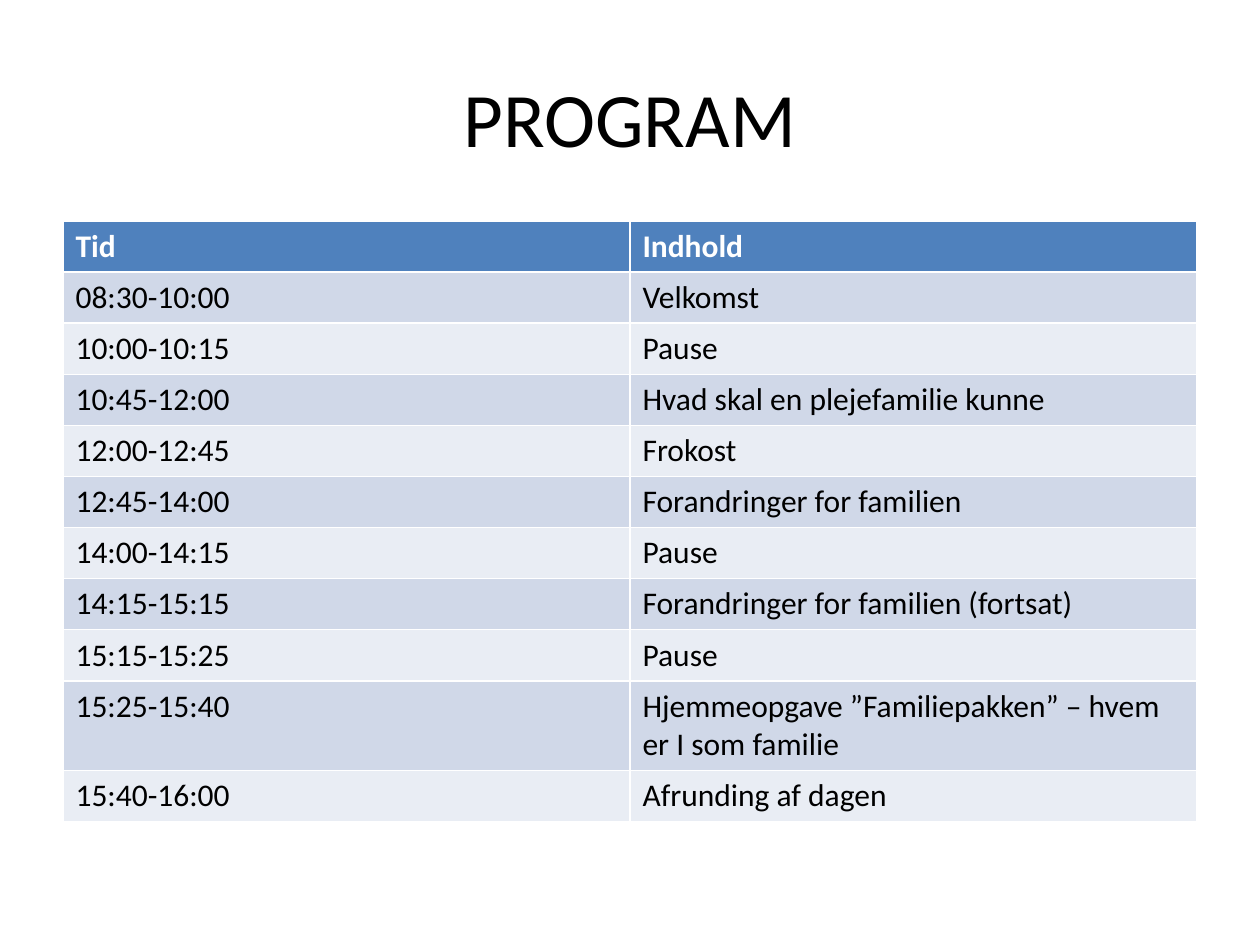
"""Build the programme slide with a title and a timetable."""
from pptx import Presentation
from pptx.dml.color import RGBColor
from pptx.enum.text import MSO_ANCHOR, PP_ALIGN
from pptx.util import Emu, Pt

SCALE = 914400 / 126
ROW_HEIGHT = 51
PROGRAM = [
    ("Tid", "Indhold"),
    ("08:30-10:00", "Velkomst"),
    ("10:00-10:15", "Pause"),
    ("10:45-12:00", "Hvad skal en plejefamilie kunne"),
    ("12:00-12:45", "Frokost"),
    ("12:45-14:00", "Forandringer for familien"),
    ("14:00-14:15", "Pause"),
    ("14:15-15:15", "Forandringer for familien (fortsat)"),
    ("15:15-15:25", "Pause"),
    ("15:25-15:40", "Hjemmeopgave ”Familiepakken” – hvem er I som familie"),
    ("15:40-16:00", "Afrunding af dagen"),
]


def px(length):
    return Emu(round(length * SCALE))


def format_text(paragraph, size, color, bold=False):
    for run in paragraph.runs:
        run.font.name = "Calibri"
        run.font.size = Pt(size)
        run.font.bold = bold
        run.font.color.rgb = RGBColor.from_string(color)


presentation = Presentation()
presentation.slide_width = px(1260)
presentation.slide_height = px(945)
slide = presentation.slides.add_slide(presentation.slide_layouts[5])

title = slide.shapes.title
title.left, title.top, title.width, title.height = px(63), px(38), px(1134), px(158)
title.text_frame.text = "PROGRAM"
title.text_frame.vertical_anchor = MSO_ANCHOR.MIDDLE
title_paragraph = title.text_frame.paragraphs[0]
title_paragraph.alignment = PP_ALIGN.CENTER
format_text(title_paragraph, 44, "000000")

table = slide.shapes.add_table(
    len(PROGRAM), 2, px(63), px(221), px(1134), px(ROW_HEIGHT * len(PROGRAM))
).table
for row_index, entries in enumerate(PROGRAM):
    table.rows[row_index].height = px(ROW_HEIGHT)
    is_header = row_index == 0
    band = "D0D8E8" if row_index % 2 else "E9EDF4"
    for column_index, entry in enumerate(entries):
        cell = table.cell(row_index, column_index)
        cell.fill.solid()
        cell.fill.fore_color.rgb = RGBColor.from_string("4F81BD" if is_header else band)
        cell.text_frame.text = entry
        format_text(cell.text_frame.paragraphs[0], 18, "FFFFFF" if is_header else "000000", is_header)

presentation.save("out.pptx")
